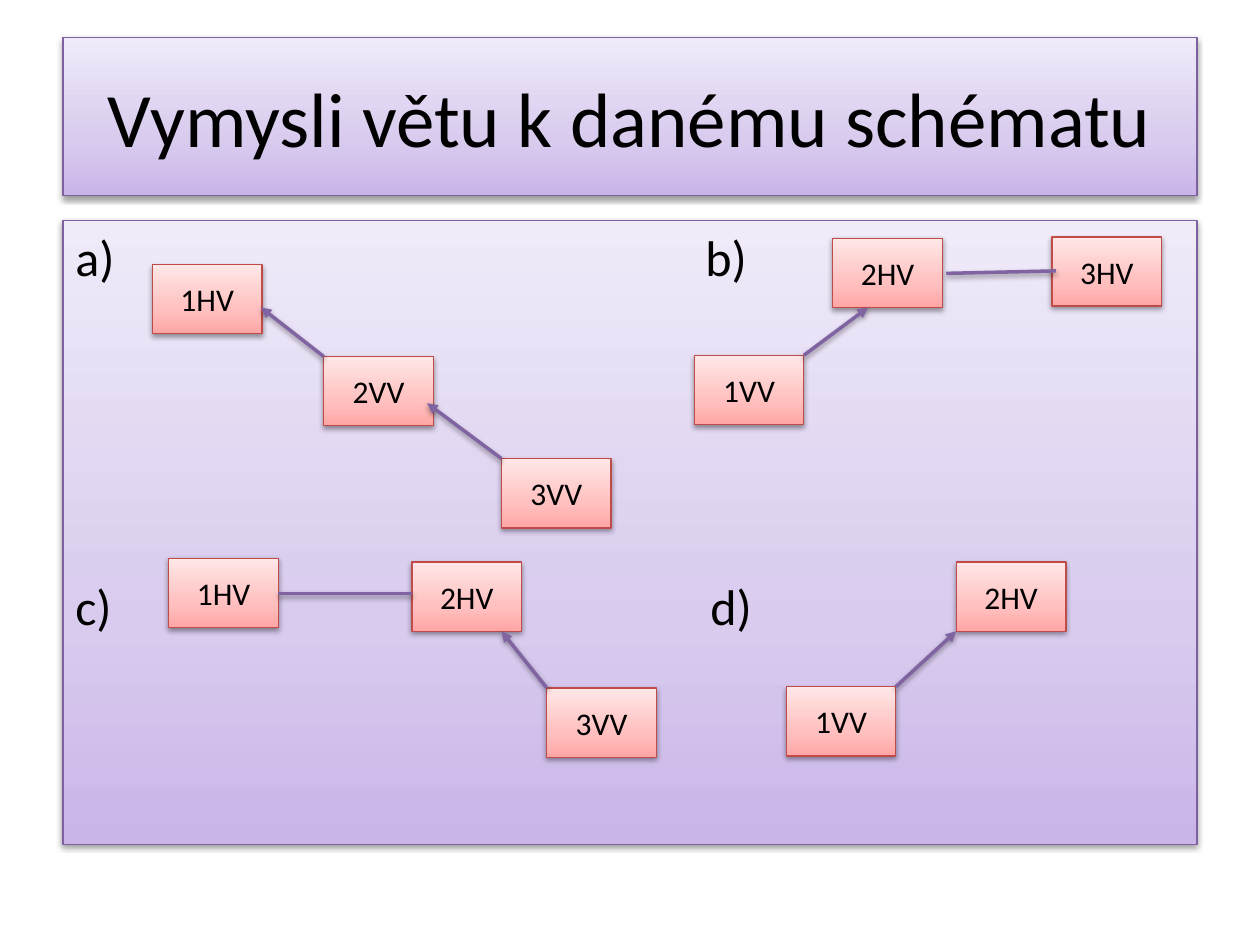
from lxml import etree
from pptx import Presentation
from pptx import util as u
from pptx.dml.color import RGBColor
from pptx.enum import shapes, text
from pptx.oxml.ns import qn

COLORS = {
    "text": "000000",
    "shadow": "000000",
    "panel_line": "7D60A0",
    "box_line": "BF4C48",
    "link": "8064A2",
}
GRADIENTS = {
    "panel": {0: "C9B5E8", 35: "D8CBEE", 100: "F0EAF9"},
    "box": {0: "FFA6A5", 35: "FFC0BF", 100: "FFE7E7"},
}
COLUMNS, ROWS = 100, 75
BOX_WIDTH, BOX_HEIGHT = 8.7, 5.5

# Clauses of each sentence scheme: label -> (column, row)
SCHEMES = {
    "a": {"1HV": (12.1, 21), "2VV": (25.7, 28.3), "3VV": (39.8, 36.4)},
    "b": {"1VV": (55.1, 28.2), "2HV": (66.1, 18.9), "3HV": (83.5, 18.8)},
    "c": {"1HV": (13.4, 44.3), "2HV": (32.7, 44.6), "3VV": (43.4, 54.6)},
    "d": {"1VV": (62.4, 54.5), "2HV": (75.9, 44.6)},
}
# Dependent clause, the upper corner the arrow leaves, and the arrow tip
ARROWS = [
    ("a", "2VV", "left", (20.7, 24.4)),
    ("a", "3VV", "left", (33.9, 32)),
    ("b", "1VV", "right", (68.9, 24.4)),
    ("c", "3VV", "left", (39.8, 50.1)),
    ("d", "1VV", "right", (75.9, 50.1)),
]
# Lines between main clauses
LINES = [((75.1, 21.7), (83.8, 21.5)), ((22.1, 47.1), (32.7, 47.1))]


def set_values(target, values):
    for name, value in values.items():
        setattr(target, name, value)


def add_element(parent, tag, **attributes):
    element = etree.SubElement(parent, qn(tag))
    for name, value in attributes.items():
        element.set(name, str(value))
    return element


class SlideBuilder:
    font = "Calibri"

    def __init__(self, presentation):
        self.slide = presentation.slides.add_slide(presentation.slide_layouts[6])
        self.column = presentation.slide_width / COLUMNS
        self.row = presentation.slide_height / ROWS

    def place(self, column, row):
        return round(column * self.column), round(row * self.row)

    def add_shadow(self, effects):
        shadow = add_element(effects, "a:outerShdw", blurRad=u.Pt(3.1), dist=u.Pt(1.6),
                             dir=90 * 60000, rotWithShape=0)
        color = add_element(shadow, "a:srgbClr", val=COLORS["shadow"])
        add_element(color, "a:alpha", val=38000)

    def add_words(self, paragraph, words, size):
        run = paragraph.add_run()
        run.text = words
        set_values(run.font, {"name": self.font, "size": u.Pt(size)})
        run.font.color.rgb = RGBColor.from_string(COLORS["text"])

    def block(self, kind, position, size):
        """Rectangle with a vertical gradient, thin outline and soft shadow."""
        shape = self.slide.shapes.add_shape(
            shapes.MSO_SHAPE.RECTANGLE, *self.place(*position), *self.place(*size))
        shape.fill.gradient()
        shape.fill.gradient_angle = 90
        stops = shape.element.spPr.find(".//" + qn("a:gsLst"))
        for stop in list(stops):
            stops.remove(stop)
        for percent, color in GRADIENTS[kind].items():
            stop = add_element(stops, "a:gs", pos=percent * 1000)
            add_element(stop, "a:srgbClr", val=color)
        shape.line.width = u.Pt(0.75)
        shape.line.color.rgb = RGBColor.from_string(COLORS[kind + "_line"])
        shape.shadow.inherit = False
        self.add_shadow(shape.element.spPr.find(qn("a:effectLst")))
        return shape

    def label(self, kind, position, size, words, points):
        """Block with one centred line of text."""
        shape = self.block(kind, position, size)
        set_values(shape.text_frame, {
            "word_wrap": True, "vertical_anchor": text.MSO_ANCHOR.MIDDLE})
        paragraph = shape.text_frame.paragraphs[0]
        paragraph.alignment = text.PP_ALIGN.CENTER
        self.add_words(paragraph, words, points)

    def panel(self, position, size, lines):
        """Block with rows of two letters: (left, right, tab column, points before)."""
        frame = self.block("panel", position, size).text_frame
        set_values(frame, {"word_wrap": True, "vertical_anchor": text.MSO_ANCHOR.TOP})
        for index, (left, right, tab, before) in enumerate(lines):
            paragraph = frame.add_paragraph() if index else frame.paragraphs[0]
            set_values(paragraph, {
                "alignment": text.PP_ALIGN.LEFT, "space_before": u.Pt(before)})
            tabs = add_element(paragraph._p.get_or_add_pPr(), "a:tabLst")
            add_element(tabs, "a:tab", pos=round(tab * self.column), algn="l")
            self.add_words(paragraph, f"{left}\t{right}", 28.6)

    def link(self, start, end, arrow=False):
        connector = self.slide.shapes.add_connector(
            shapes.MSO_CONNECTOR.STRAIGHT, *self.place(*start), *self.place(*end))
        connector.line.width = u.Pt(2)
        connector.line.color.rgb = RGBColor.from_string(COLORS["link"])
        properties = connector._element.spPr
        if arrow:
            add_element(properties.find(qn("a:ln")), "a:tailEnd", type="triangle")
        self.add_shadow(add_element(properties, "a:effectLst"))


def main():
    presentation = Presentation()
    set_values(presentation, {"slide_width": u.Inches(10), "slide_height": u.Inches(7.5)})
    builder = SlideBuilder(presentation)
    builder.label("panel", (5, 3), (90, 12.5), "Vymysli větu k danému schématu", 44)
    builder.panel((5, 17.5), (90, 49.5),
                  [("a)", "b)", 50, 0), ("c)", "d)", 50.4, 165)])
    for clauses in SCHEMES.values():
        for words, position in clauses.items():
            builder.label("box", position, (BOX_WIDTH, BOX_HEIGHT), words, 18)
    for scheme, clause, corner, tip in ARROWS:
        column, row = SCHEMES[scheme][clause]
        start = (column + BOX_WIDTH if corner == "right" else column, row)
        builder.link(start, tip, arrow=True)
    for start, end in LINES:
        builder.link(start, end)
    presentation.save("out.pptx")


if __name__ == "__main__":
    main()
